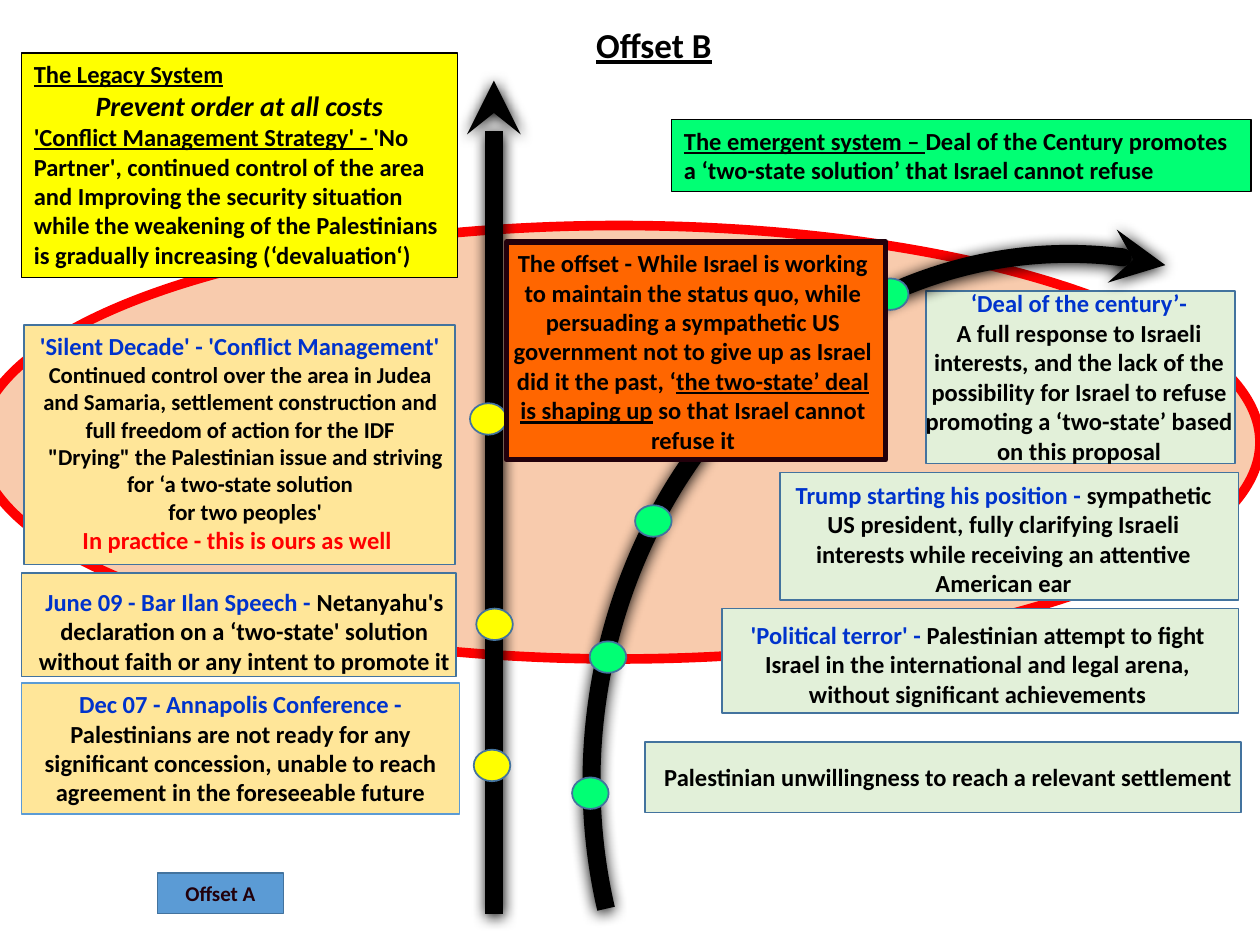
from lxml import etree
from pptx import Presentation, util as u
from pptx.dml.color import RGBColor
from pptx.enum import shapes, text
from pptx.oxml.ns import qn

# Grid: 100 columns by 75 rows of square cells
CELL = u.Inches(0.1)
BLACK, BLUE, RED = "000000", "0033CC", "FF0000"
YELLOW, GREEN, SAND, SAGE = "FFFF00", "01FF74", "FFE699", "E2F0D9"
EDGE, DARK = "43739E", "22000B"
RECT, OVAL = shapes.MSO_SHAPE.RECTANGLE, shapes.MSO_SHAPE.OVAL
LEFT, CENTER = text.PP_ALIGN.LEFT, text.PP_ALIGN.CENTER
TOP, MIDDLE = text.MSO_ANCHOR.TOP, text.MSO_ANCHOR.MIDDLE
color = RGBColor.from_string

prs = Presentation()
prs.slide_width, prs.slide_height = 100 * CELL, 75 * CELL
slide = prs.slides.add_slide(prs.slide_layouts[5])


def draw(kind, place, fill=None, edge=EDGE, weight=1):
    """Add a preset shape, or a text box when kind is None, placed in grid cells."""
    cells = [round(value * CELL) for value in place]
    if kind is None:
        return slide.shapes.add_textbox(*cells)
    shape = slide.shapes.add_shape(kind, *cells)
    shape.shadow.inherit = False
    if fill:
        shape.fill.solid()
        shape.fill.fore_color.rgb = color(fill)
    else:
        shape.fill.background()
    shape.line.color.rgb = color(edge)
    shape.line.width = u.Pt(weight)
    return shape


def write(shape, paragraphs, anchor=TOP, wrap=True):
    """Write (alignment, runs) paragraphs; a run is (words, colour, size, style)."""
    frame = shape.text_frame
    frame.word_wrap = wrap
    frame.auto_size = text.MSO_AUTO_SIZE.NONE
    frame.vertical_anchor = anchor
    for i, (align, runs) in enumerate(paragraphs):
        para = frame.add_paragraph() if i else frame.paragraphs[0]
        para.alignment = align
        for words, ink, size, style in runs:
            run = para.add_run()
            run.text = words.rstrip("\n")
            font = run.font
            font.name, font.size, font.bold = "Calibri", u.Pt(size), True
            font.underline, font.italic = "u" in style, "i" in style
            font.color.rgb = color(ink)
            if words.endswith("\n"):
                para.add_line_break()


# Title
title = slide.shapes.title
title.left, title.top, title.width, title.height = (
    round(value * CELL) for value in (28.6, -0.2, 46.6, 7.9))
write(title, [(CENTER, [("Offset B", BLACK, 20, "u")])], MIDDLE)
title.text_frame.paragraphs[0].line_spacing = 0.9

# Shared field behind both systems
draw(OVAL, (-1.7, 17.9, 101.7, 34.4), "F8CBAD", RED, 5.5)

# Panels behind the event texts
for place, fill in [
    ((1.7, 45.5, 34.5, 8.2), SAND),
    ((1.9, 25.8, 34.2, 19), SAND),
    ((57.3, 48.3, 41, 8.3), SAGE),
    ((51.2, 58.9, 47.3, 5.6), SAGE),
    ((73.5, 23.1, 24.5, 13.7), SAGE),
    ((61.9, 37.5, 36.4, 10.1), SAGE),
]:
    draw(RECT, place, fill)

# Legacy arrow goes straight up, emergent arrow bends to the right
legacy_arrow = slide.shapes.add_connector(
    shapes.MSO_CONNECTOR.STRAIGHT,
    *(round(value * CELL) for value in (39.2, 72.5, 39.2, 6.4)))
legacy_arrow.line.color.rgb = color(BLACK)
legacy_arrow.line.width = u.Pt(10.25)
emergent_arrow = draw(shapes.MSO_SHAPE.ARC, (43, 24.1, 82, 74), None, BLACK, 10.25)
emergent_arrow.rotation = 276.3
emergent_arrow.adjustments[0] = 147.98
emergent_arrow.adjustments[1] = 3.4
for arrow in (legacy_arrow, emergent_arrow):
    etree.SubElement(arrow.line._get_or_add_ln(), qn("a:tailEnd"), type="stealth")
    props = arrow._element.spPr
    effects = props.find(qn("a:effectLst"))
    if effects is None:
        effects = etree.SubElement(props, qn("a:effectLst"))
    shadow = etree.SubElement(
        effects, qn("a:outerShdw"), blurRad=str(u.Pt(8.5)), dist=str(u.Pt(1)),
        dir=str(90 * 60000), algn="ctr", rotWithShape="0")
    etree.SubElement(shadow, qn("a:srgbClr"), val=BLACK)

# Event dots along each arrow
for fill, spots in [
    (YELLOW, [(37.8, 48.3), (37.3, 32), (37.6, 59.5)]),
    (GREEN, [(46.8, 50.9), (50.4, 40.1), (69.2, 22.1), (45.4, 61.7)]),
]:
    for left, top in spots:
        draw(OVAL, (left, top, 2.9, 2.5), fill)

# The two systems
write(draw(RECT, (1.7, 4.2, 34.6, 17.8), YELLOW, BLACK, 0.75), [
    (LEFT, [("The Legacy System", BLACK, 14, "u")]),
    (CENTER, [("Prevent order at all costs", BLACK, 16, "i")]),
    (LEFT, [("'Conflict Management Strategy' - ", BLACK, 14, "u"),
            ("'No Partner', continued control of the area and Improving the security "
             "situation while the weakening of the Palestinians is gradually "
             "increasing (‘devaluation‘)", BLACK, 14, "")]),
])
write(draw(RECT, (53.3, 9.5, 46, 5.7), GREEN, BLACK, 0.75), [
    (LEFT, [("The emergent system – ", BLACK, 14, "u"),
            ("Deal of the Century promotes a ‘two-state solution’ that Israel "
             "cannot refuse", BLACK, 14, "")]),
])

# Events with a blue lead-in
annapolis = draw(RECT, (1.7, 54.2, 34.8, 10.4), SAND, "5B9BD5", 0.75)
for box, lead, words in [
    (draw(None, (57.8, 48.7, 39.6, 8.1)), "'Political terror' - ",
     "Palestinian attempt to fight Israel in the international and legal arena, "
     "without significant achievements"),
    (draw(None, (61.9, 37.6, 35.5, 10.4)), "Trump starting his position - ",
     "sympathetic US president, fully clarifying Israeli interests while receiving "
     "an attentive American ear"),
    (draw(None, (1.8, 46.1, 35.2, 8.1)), "June 09 - Bar Ilan Speech - ",
     "Netanyahu's declaration on a ‘two-state' solution without faith or any "
     "intent to promote it"),
    (annapolis, "Dec 07 - Annapolis Conference - ",
     "Palestinians are not ready for any significant concession, unable to reach "
     "agreement in the foreseeable future"),
]:
    write(box, [(CENTER, [(lead, BLUE, 14, ""), (words, BLACK, 14, "")])])

# Events with their own layout
write(draw(None, (51.5, 60, 47.5, 3.4)), [
    (CENTER, [("Palestinian unwillingness to reach a relevant settlement",
               BLACK, 14, "")]),
], wrap=False)
write(draw(None, (72.1, 22.4, 27.1, 15.1)), [
    (CENTER, [("‘Deal of the century’-", BLUE, 14, "")]),
    (CENTER, [("A full response to Israeli interests, and the lack of the possibility "
               "for Israel to refuse promoting a ‘two-state’ based on this proposal",
               BLACK, 14, "")]),
])
write(draw(None, (1.7, 25.8, 34.7, 18.8)), [
    (CENTER, [("'Silent Decade' - 'Conflict Management'\n", BLUE, 14, ""),
              ("Continued control over the area in Judea and Samaria, settlement "
               "construction and full freedom of action for the IDF", BLACK, 13, "")]),
    (CENTER, [("  \"Drying\" the Palestinian issue and striving for ‘a two-state "
               "solution", BLACK, 13, "")]),
    (CENTER, [("  for two peoples'\n", BLACK, 13, ""),
              ("In practice - this is ours as well ", RED, 14, "")]),
])

# The offset between the systems
draw(RECT, (40.2, 19.2, 30.1, 17.3), "FF6600", DARK, 3)
write(draw(None, (39.7, 19.2, 30.6, 17.5)), [
    (CENTER, [("The offset - While Israel is working to maintain the status quo, while "
               "persuading a sympathetic US government not to give up as Israel did it "
               "the past, ‘", BLACK, 14, ""),
              ("the two-state’ deal is shaping up", BLACK, 14, "u"),
              (" so that Israel cannot refuse it", BLACK, 14, "")]),
])

# Button to the other offset
button = draw(shapes.MSO_SHAPE.ACTION_BUTTON_CUSTOM, (12.5, 69.3, 10, 3.2), "5B9BD5")
write(button, [(CENTER, [("Offset A", DARK, 12, "")])], MIDDLE)

prs.save("out.pptx")
